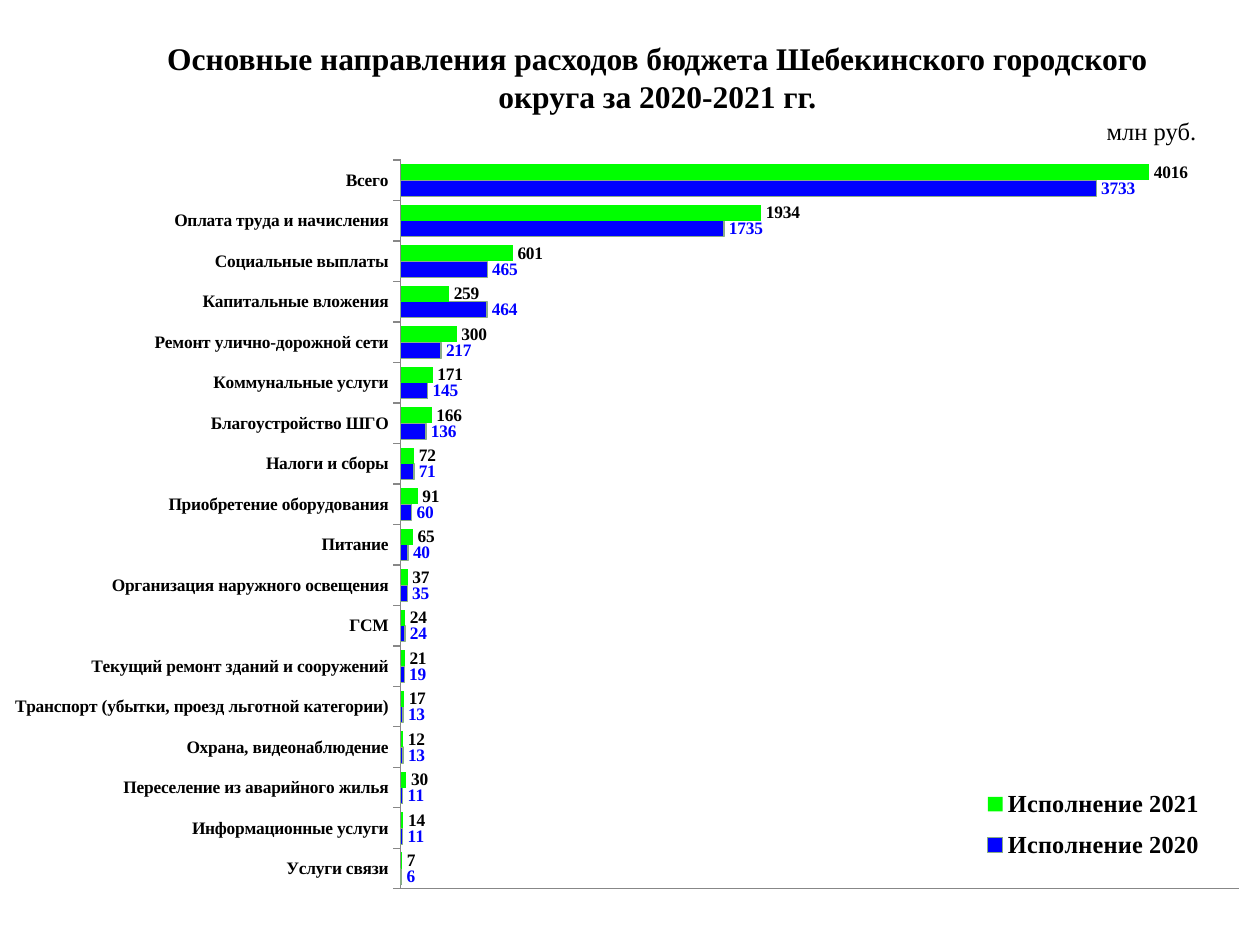
from lxml import etree
from pptx import Presentation, util as u
from pptx.chart.data import CategoryChartData
from pptx.dml.color import RGBColor
from pptx.enum import chart as c, text
from pptx.oxml import parse_xml
from pptx.oxml.ns import nsdecls, qn

FONT = "Times New Roman"
BLACK, GREY = "000000", "878787"
TITLE = "Основные направления расходов бюджета Шебекинского городского округа за 2020-2021 гг."
UNIT = "млн руб."
EXPENSES = [
    ("Услуги связи", 6, 7),
    ("Информационные услуги", 11, 14),
    ("Переселение из аварийного жилья", 11, 30),
    ("Охрана, видеонаблюдение", 13, 12),
    ("Транспорт (убытки, проезд льготной категории)", 13, 17),
    ("Текущий ремонт зданий и сооружений", 19, 21),
    ("ГСМ", 24, 24),
    ("Организация наружного освещения", 35, 37),
    ("Питание", 40, 65),
    ("Приобретение оборудования", 60, 91),
    ("Налоги и сборы", 71, 72),
    ("Благоустройство ШГО", 136, 166),
    ("Коммунальные услуги", 145, 171),
    ("Ремонт улично-дорожной сети", 217, 300),
    ("Капитальные вложения", 464, 259),
    ("Социальные выплаты", 465, 601),
    ("Оплата труда и начисления", 1735, 1934),
    ("Всего", 3733, 4016),
]
SERIES = [
    ("Исполнение 2020", "0000FF", "8BAD88", "0000FF"),
    ("Исполнение 2021", "00FF00", None, BLACK),
]
PLOT_LAYOUT = (0.31, 0.08, 0.69, 0.91)
LEGEND_LAYOUT = (0.78, 0.85, 0.2, 0.12)


def px(length):
    return u.Emu(length * 914400 // 126)


def color(value):
    return RGBColor.from_string(value)


def set_font(font, size, bold=False, value=BLACK):
    font.name, font.size, font.bold = FONT, u.Pt(size), bold
    font.color.rgb = color(value)


def write(shape, content, size, bold=False):
    frame = shape.text_frame
    frame.text = content
    frame.word_wrap = True
    frame.auto_size = text.MSO_AUTO_SIZE.NONE
    frame.vertical_anchor = text.MSO_ANCHOR.MIDDLE
    paragraph = frame.paragraphs[0]
    paragraph.alignment = text.PP_ALIGN.CENTER
    paragraph.line_spacing = 1.0
    paragraph.space_before = u.Pt(0)
    set_font(paragraph.font, size, bold)


def make_layout(box, inner=False):
    layout = parse_xml(f"<c:layout {nsdecls('c')}><c:manualLayout/></c:layout>")
    target = [("layoutTarget", "inner")] if inner else []
    modes = [("xMode", "edge"), ("yMode", "edge")]
    for tag, value in target + modes + list(zip("xywh", box)):
        etree.SubElement(layout[0], qn(f"c:{tag}")).set("val", str(value))
    return layout


def add_expense_chart(slide):
    data = CategoryChartData()
    data.categories = [row[0] for row in EXPENSES]
    for index, entry in enumerate(SERIES, 1):
        data.add_series(entry[0], [row[index] for row in EXPENSES])
    chart = slide.shapes.add_chart(
        c.XL_CHART_TYPE.BAR_CLUSTERED, px(15), px(96), px(1225), px(801), data
    ).chart
    set_font(chart.font, 12)
    chart.has_title = False

    plot = chart.plots[0]
    plot.gap_width, plot.overlap = 52, 0
    plot.vary_by_categories = False
    for series, (_, fill, line, label) in zip(plot.series, SERIES):
        series.format.fill.solid()
        series.format.fill.fore_color.rgb = color(fill)
        if line:
            series.format.line.color.rgb = color(line)
            series.format.line.width = u.Pt(0.75)
        else:
            series.format.line.fill.background()
        labels = series.data_labels
        labels.show_value = True
        labels.position = c.XL_LABEL_POSITION.OUTSIDE_END
        set_font(labels.font, 10, True, label)

    categories, values = chart.category_axis, chart.value_axis
    for axis in (categories, values):
        axis.has_major_gridlines = False
        axis.minor_tick_mark = c.XL_TICK_MARK.NONE
        axis.format.line.color.rgb = color(GREY)
        axis.format.line.width = u.Pt(0.75)
    categories.major_tick_mark = c.XL_TICK_MARK.OUTSIDE
    set_font(categories.tick_labels.font, 10, True)
    values.major_tick_mark = c.XL_TICK_MARK.NONE
    values.tick_label_position = c.XL_TICK_LABEL_POSITION.NONE
    values.minimum_scale, values.maximum_scale = 0, 4500

    chart.has_legend = True
    legend = chart.legend
    legend.position = c.XL_LEGEND_POSITION.RIGHT
    legend.include_in_layout = False
    set_font(legend.font, 14, True)

    area = chart._chartSpace.find(".//" + qn("c:plotArea"))
    frame = chart._chartSpace.find(".//" + qn("c:legend"))
    for parent in (area, frame):
        for old in parent.findall(qn("c:layout")):
            parent.remove(old)
    area.insert(0, make_layout(PLOT_LAYOUT, inner=True))
    frame.find(qn("c:legendPos")).addnext(make_layout(LEGEND_LAYOUT))


def main():
    presentation = Presentation()
    presentation.slide_width, presentation.slide_height = px(1260), px(945)
    slide = presentation.slides.add_slide(presentation.slide_layouts[5])
    add_expense_chart(slide)

    title = slide.shapes.title
    title.left, title.top, title.width, title.height = map(px, (122, 27, 1071, 100))
    write(title, TITLE, 18, True)

    unit = slide.shapes.add_textbox(px(1082), px(96), px(139), px(69))
    write(unit, UNIT, 14)
    presentation.save("out.pptx")


if __name__ == "__main__":
    main()
